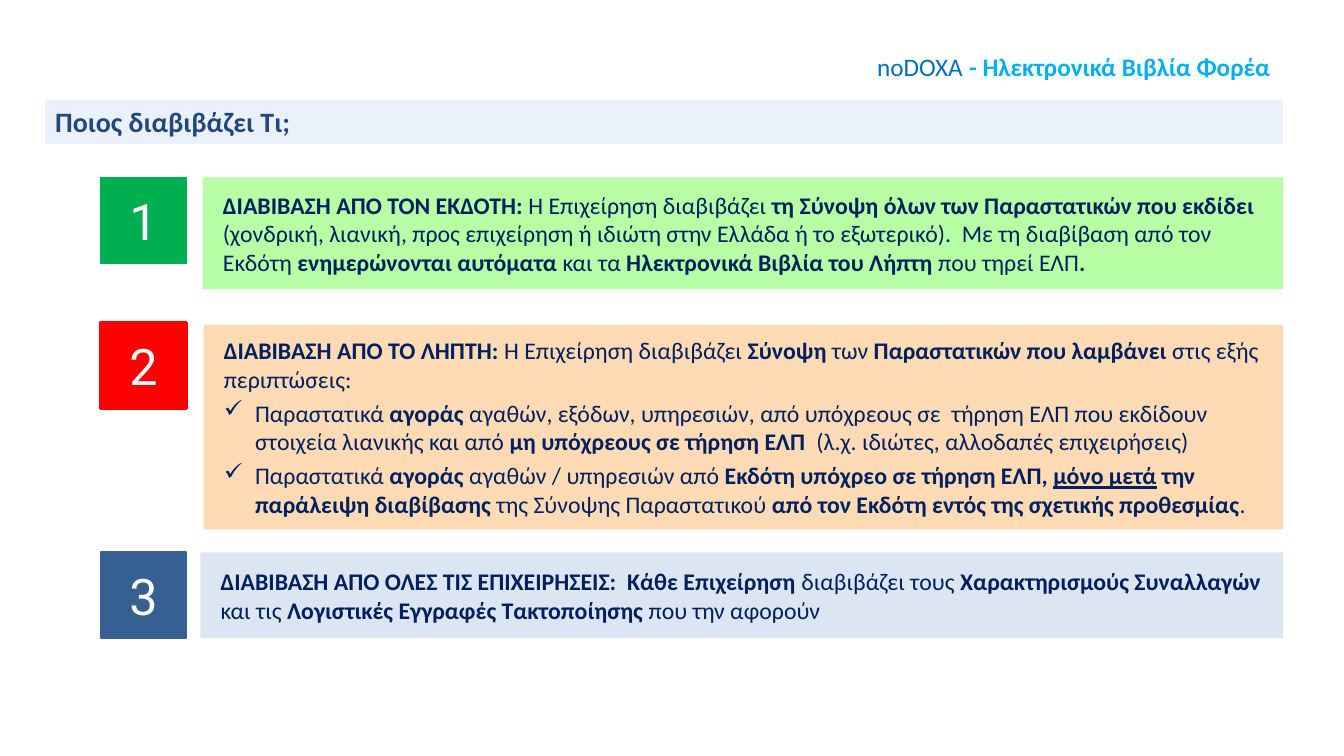
from dataclasses import dataclass

import pptx
import pptx.dml.color
import pptx.enum.shapes
import pptx.enum.text
import pptx.util
from lxml import etree
from pptx.util import Cm, Pt

ALIGN = pptx.enum.text.PP_ALIGN
ANCHOR = pptx.enum.text.MSO_ANCHOR


@dataclass(frozen=True)
class Theme:
    body_font: str = "Calibri"
    number_font: str = "Roboto"
    title_size: int = 20
    header_size: int = 18
    body_size: int = 17
    number_size: int = 36
    title: str = "1F497D"
    title_band: str = "EAF1FA"
    body: str = "002060"
    number: str = "FFFFFF"
    brand: str = "0070C0"
    subject: str = "00B0F0"
    issuer: tuple = ("00B050", "B7FEA4")
    receiver: tuple = ("FF0000", "FEDBB4")
    everyone: tuple = ("376092", "DCE6F2")


THEME = Theme()
RIGHT_EDGE = 32.33
BADGE_LEFT, BADGE_SIZE = 2.54, 2.16

# In the texts, *...* is bold and _..._ is underlined.
ISSUER_TEXT = [
    "*ΔΙΑΒΙΒΑΣΗ ΑΠΟ ΤΟΝ ΕΚΔΟΤΗ: *Η Επιχείρηση διαβιβάζει* τη Σύνοψη όλων των "
    "Παραστατικών που εκδίδει *(χονδρική, λιανική, προς επιχείρηση ή ιδιώτη στην "
    "Ελλάδα ή το εξωτερικό).  Με τη διαβίβαση από τον Εκδότη *ενημερώνονται αυτόματα "
    "*και τα *Ηλεκτρονικά Βιβλία του Λήπτη *που τηρεί ΕΛΠ*.*",
]
RECEIVER_TEXT = [
    "*ΔΙΑΒΙΒΑΣΗ ΑΠΟ ΤΟ ΛΗΠΤΗ: *Η Επιχείρηση διαβιβάζει *Σύνοψη* των *Παραστατικών "
    "που λαμβάνει *στις εξής περιπτώσεις:",
    "Παραστατικά *αγοράς* αγαθών, εξόδων, υπηρεσιών, από υπόχρεους σε  τήρηση ΕΛΠ που "
    "εκδίδουν στοιχεία λιανικής και από *μη υπόχρεους σε τήρηση ΕΛΠ*  (λ.χ. ιδιώτες, "
    "αλλοδαπές επιχειρήσεις)",
    "Παραστατικά *αγοράς* αγαθών / υπηρεσιών από *Εκδότη υπόχρεο σε τήρηση ΕΛΠ, _μόνο "
    "μετά_ την παράλειψη διαβίβασης* της Σύνοψης Παραστατικού *από τον Εκδότη εντός "
    "της σχετικής προθεσμίας*.",
]
EVERYONE_TEXT = [
    "*ΔΙΑΒΙΒΑΣΗ ΑΠΟ ΟΛΕΣ ΤΙΣ ΕΠΙΧΕΙΡΗΣΕΙΣ:  Κάθε Επιχείρηση *διαβιβάζει τους "
    "*Χαρακτηρισμούς Συναλλαγών* και τις *Λογιστικές Εγγραφές Τακτοποίησης* που την "
    "αφορούν",
]


def rgb(value):
    return pptx.dml.color.RGBColor.from_string(value)


def apply(target, formats):
    for name, value in formats.items():
        setattr(target, name, value)


def add_run(paragraph, text, size, color, font=THEME.body_font, **formats):
    run = paragraph.add_run()
    run.text = text
    apply(run.font, {"name": font, "size": Pt(size), **formats})
    run.font.color.rgb = rgb(color)


def add_marked_text(paragraph, marked):
    """Writes body text; * switches bold and _ switches underline."""
    for i, weight_part in enumerate(marked.split("*")):
        for j, part in enumerate(weight_part.split("_")):
            if part:
                add_run(paragraph, part, THEME.body_size, THEME.body,
                        bold=i % 2 == 1, underline=j % 2 == 1)


def add_check_bullet(paragraph):
    properties = paragraph._p.get_or_add_pPr()
    properties.set("marL", str(Cm(0.79)))
    properties.set("indent", str(Cm(-0.79)))
    bullet = etree.SubElement(properties, pptx.oxml.ns.qn("a:buChar"))
    bullet.set("char", "✓")


def add_box(slide, left, top, width, height, fill, line=None, line_width=0):
    box = slide.shapes.add_shape(pptx.enum.shapes.MSO_SHAPE.RECTANGLE,
                                 Cm(left), Cm(top), Cm(width), Cm(height))
    box.shadow.inherit = False
    box.fill.solid()
    box.fill.fore_color.rgb = rgb(fill)
    if line:
        box.line.color.rgb = rgb(line)
        box.line.width = Pt(line_width)
    else:
        box.line.fill.background()
    box.text_frame.word_wrap = True
    return box.text_frame


def add_badge(slide, number, top, color, line_width):
    frame = add_box(slide, BADGE_LEFT, top, BADGE_SIZE, BADGE_SIZE,
                    color, color, line_width)
    frame.vertical_anchor = ANCHOR.MIDDLE
    frame.paragraphs[0].alignment = ALIGN.CENTER
    add_run(frame.paragraphs[0], str(number), THEME.number_size, THEME.number,
            THEME.number_font)


def add_card(slide, left, top, height, fill, texts, margins):
    frame = add_box(slide, left, top, RIGHT_EDGE - left, height, fill)
    sides = ("margin_left", "margin_top", "margin_right", "margin_bottom")
    apply(frame, {"vertical_anchor": ANCHOR.MIDDLE,
                  **dict(zip(sides, map(Cm, margins)))})
    for index, text in enumerate(texts):
        paragraph = frame.add_paragraph() if index else frame.paragraphs[0]
        before, after = ((4, 4), (0, 2), (2, 2))[index]
        apply(paragraph, {"alignment": ALIGN.LEFT, "space_before": Pt(before),
                          "space_after": Pt(after)})
        if index:
            add_check_bullet(paragraph)
        add_marked_text(paragraph, text)


def add_title(slide):
    frame = add_box(slide, 1.14, 2.51, RIGHT_EDGE - 1.14, 1.12, THEME.title_band)
    frame.vertical_anchor = ANCHOR.TOP
    frame.paragraphs[0].alignment = ALIGN.LEFT
    add_run(frame.paragraphs[0], "Ποιος διαβιβάζει Τι;", THEME.title_size,
            THEME.title, bold=True)


def add_header(slide):
    header = slide.shapes.add_textbox(Cm(21.46), Cm(1.09), Cm(10.8), Cm(1.12))
    header.text_frame.word_wrap = True
    line = header.text_frame.paragraphs[0]
    line.alignment = ALIGN.RIGHT
    add_run(line, "noDOXA", THEME.header_size, THEME.brand)
    add_run(line, " ", THEME.title_size, THEME.brand, bold=True)
    add_run(line, "- Ηλεκτρονικά Βιβλία Φορέα", THEME.header_size, THEME.subject,
            bold=True)


def main():
    deck = pptx.Presentation()
    apply(deck, {"slide_width": Cm(33.87), "slide_height": Cm(19.05)})
    slide = deck.slides.add_slide(deck.slide_layouts[6])

    add_title(slide)
    even, open_right = (0.51, 0.51, 0.51, 0.51), (0.51, 0.25, 0, 0.25)
    steps = [
        # colours, badge top, badge line, card left, top, height, margins, texts
        (THEME.issuer, 4.47, 0.75, 5.11, 4.47, 2.82, even, ISSUER_TEXT),
        (THEME.receiver, 8.13, 2.5, 5.13, 8.18, 5.16, open_right, RECEIVER_TEXT),
        (THEME.everyone, 13.92, 1.5, 5.05, 13.92, 2.16, open_right, EVERYONE_TEXT),
    ]
    for number, step in enumerate(steps, start=1):
        (strong, pale), badge_top, line_width, left, top, height, margins, texts = step
        add_card(slide, left, top, height, pale, texts, margins)
        add_badge(slide, number, badge_top, strong, line_width)
    add_header(slide)

    deck.save("out.pptx")


if __name__ == "__main__":
    main()
